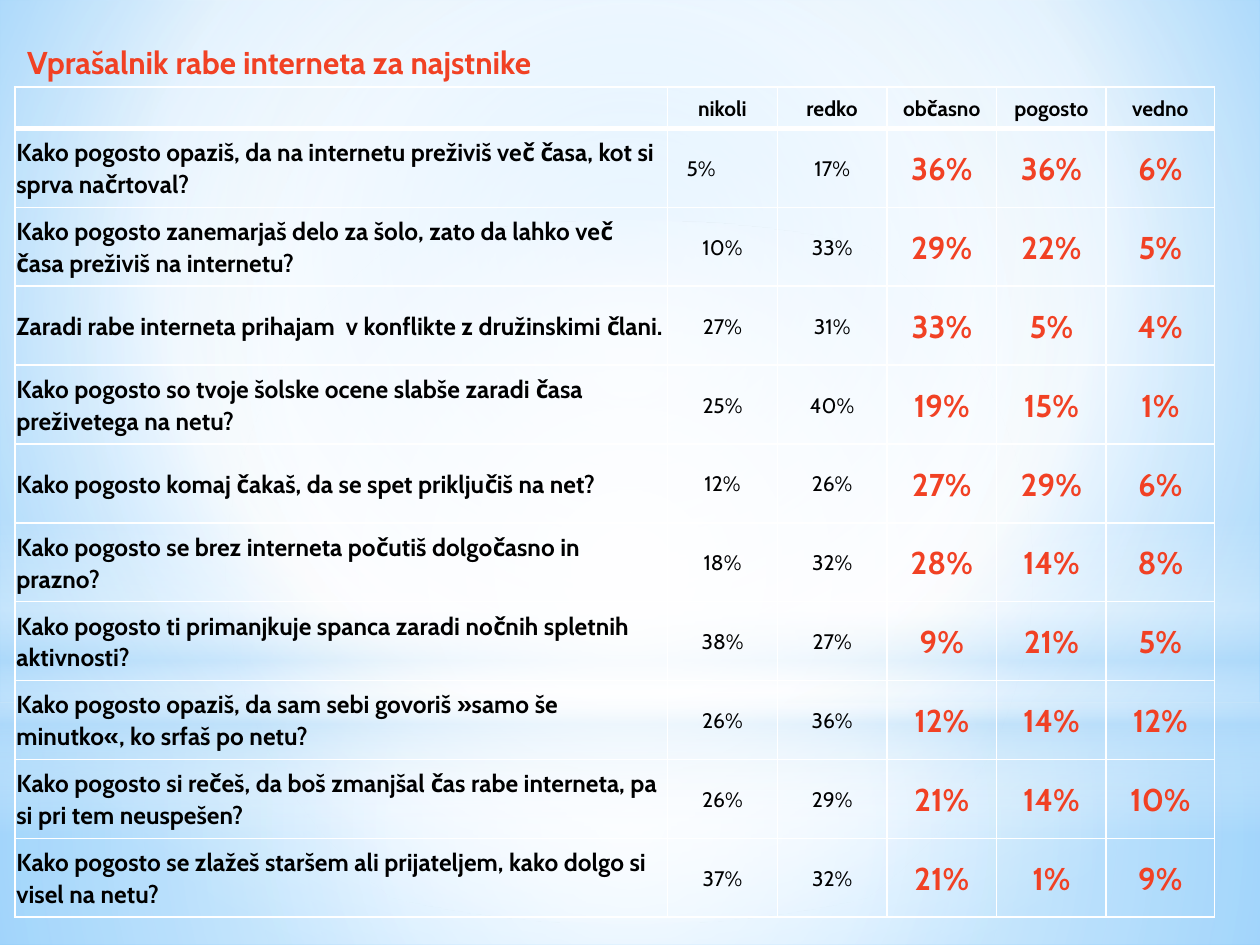
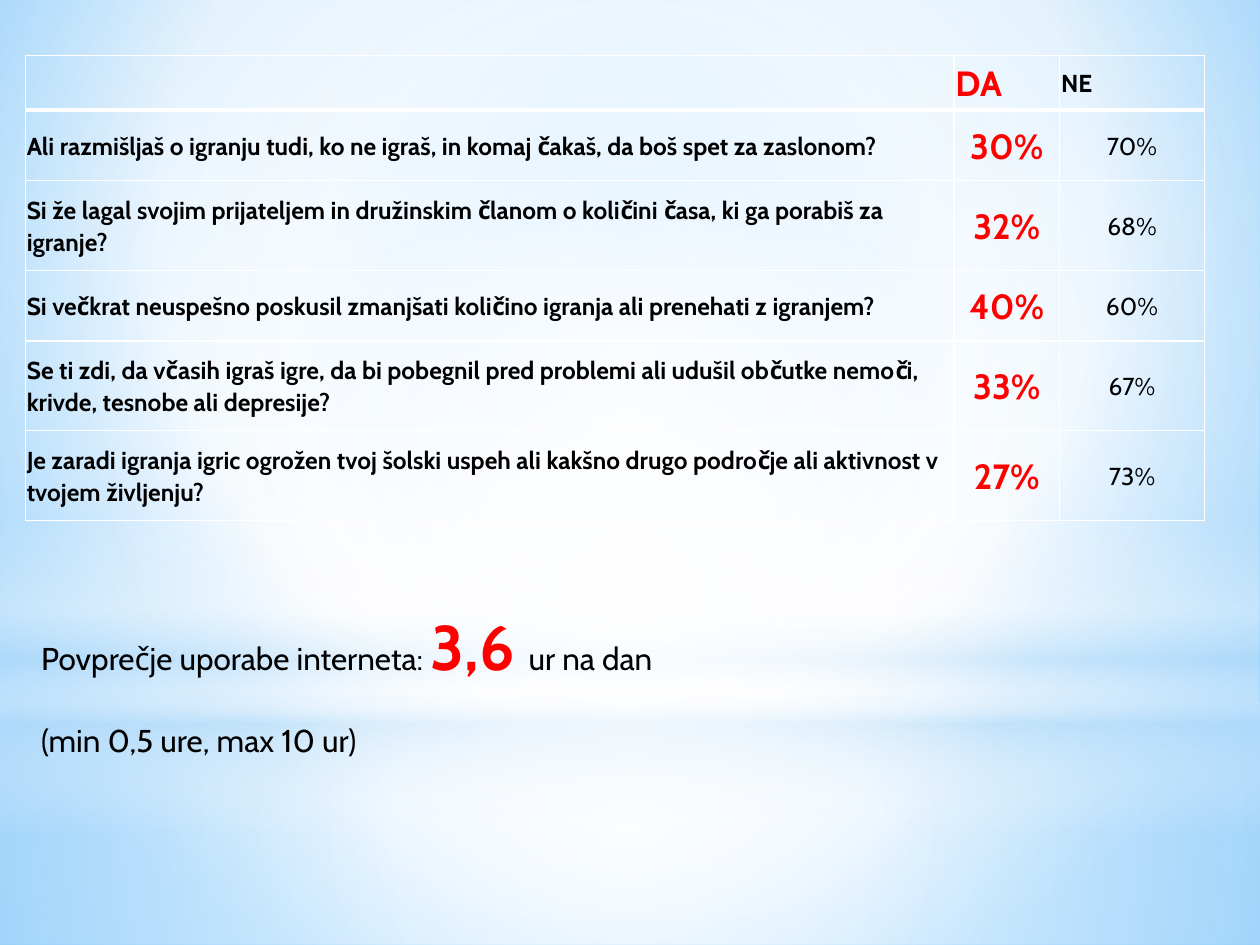
from dataclasses import dataclass

from lxml import etree
from pptx import Presentation
from pptx import util as u
from pptx.dml.color import RGBColor
from pptx.enum import shapes, text
from pptx.oxml.ns import nsdecls, qn
from pptx.util import Cm, Pt


# Theme: colours, type sizes and table measures
@dataclass(frozen=True)
class Theme:
    font: str = "Cabin"
    ink: str = "000000"
    white: str = "FFFFFF"
    orange: str = "F14124"
    red: str = "FF0000"
    sky: str = "9ED5FF"
    deep_sky: str = "5BB9FF"
    haze: str = "B4DCFA"
    small: int = 12
    question: int = 14
    body: int = 18
    answer: int = 20
    figure: int = 36
    spacing: float = 1.07
    inset: u.Length = Cm(0.03)
    rule: u.Length = Pt(1)
    header_rule: u.Length = Pt(3)


@dataclass(frozen=True)
class Style:
    size: int
    color: str = Theme.ink
    bold: bool = False
    align: text.PP_ALIGN = text.PP_ALIGN.CENTER


def gradient(stops, focus=None):
    """Gradient of (position, colour, opacity); circular if it has a focus."""
    gs = "".join(
        f'<a:gs pos="{pos * 1000}"><a:srgbClr val="{color}">'
        f'<a:alpha val="{opacity * 1000}"/></a:srgbClr></a:gs>'
        for pos, color, opacity in stops)
    if focus:
        sides = " ".join(f'{side}="{value * 1000}"' for side, value in zip("ltrb", focus))
        shade = f'<a:path path="circle"><a:fillToRect {sides}/></a:path>'
    else:
        shade = '<a:lin ang="5400000" scaled="0"/>'
    return etree.fromstring(
        f'<a:gradFill {nsdecls("a")} rotWithShape="1"><a:gsLst>{gs}</a:gsLst>{shade}</a:gradFill>')


def swap_fill(parent, grad):
    parent.replace(parent.find(qn("a:solidFill")), grad)


class Deck:
    def __init__(self, theme):
        self.theme = theme
        self.prs = Presentation()
        self.prs.slide_width, self.prs.slide_height = Cm(25.4), Cm(19.05)
        self.s = None

    def new_slide(self):
        self.s = self.prs.slides.add_slide(self.prs.slide_layouts[6])

    def backdrop(self, stops, focus, glows):
        """Give the master its background and its layers of light."""
        master = self.prs.slide_master
        master.background.fill.solid()
        swap_fill(master.element.find(".//" + qn("p:bgPr")), gradient(stops, focus))
        for number, (kind, top, height, glow_stops, glow_focus) in enumerate(glows, 20):
            sp = self.s.shapes.add_shape(kind, 0, Cm(top), self.prs.slide_width, Cm(height))
            sp.shadow.inherit = False
            sp.line.fill.background()
            sp.fill.solid()
            swap_fill(sp.element.spPr, gradient(glow_stops, glow_focus))
            sp.element.nvSpPr.cNvPr.id = number
            master.shapes.element.append(sp.element)

    def style_font(self, font, style):
        font.name, font.size, font.bold = self.theme.font, Pt(style.size), style.bold
        font.color.rgb = RGBColor.from_string(style.color)

    def text_box(self, left, top, width, height, paragraphs, wrap=True, gap=0):
        """Each paragraph is a list of (text, style) runs."""
        box = self.s.shapes.add_textbox(Cm(left), Cm(top), Cm(width), Cm(height))
        tf = box.text_frame
        tf.word_wrap = wrap
        tf.auto_size = text.MSO_AUTO_SIZE.SHAPE_TO_FIT_TEXT
        for i, runs in enumerate(paragraphs):
            p = tf.add_paragraph() if i else tf.paragraphs[0]
            if i:
                p.space_before = Pt(gap)
            for words, style in runs:
                r = p.add_run()
                r.text = words
                self.style_font(r.font if len(runs) > 1 else p.font, style)

    def borders(self, cell, **widths):
        tc_pr = cell._tc.get_or_add_tcPr()
        for i, side in enumerate("LRTB"):
            tc_pr.insert(i, etree.fromstring(
                f'<a:ln{side} {nsdecls("a")} w="{widths.get(side, self.theme.rule)}">'
                f'<a:solidFill><a:srgbClr val="{self.theme.white}"/></a:solidFill></a:ln{side}>'))

    def table(self, left, top, cols, heights, rows, header, columns):
        """header and columns hold one style per column."""
        th = self.theme
        frame = self.s.shapes.add_table(len(rows), len(cols), Cm(left), Cm(top),
                                        Cm(sum(cols)), Cm(sum(heights)))
        t = frame.table
        t.horz_banding = False
        for col, width in zip(t.columns, cols):
            col.width = Cm(width)
        for i, (row, height) in enumerate(zip(t.rows, heights)):
            row.height = Cm(height)
            styles = columns if i else header
            for cell, words, style in zip(row.cells, rows[i], styles):
                cell.fill.background()
                cell.vertical_anchor = text.MSO_ANCHOR.MIDDLE
                cell.margin_left = cell.margin_right = th.inset
                cell.margin_top = cell.margin_bottom = th.inset
                p = cell.text_frame.paragraphs[0]
                p.text, p.alignment, p.line_spacing = words, style.align, th.spacing
                self.style_font(p.font, style)
                edge = {0: {"B": th.header_rule}, 1: {"T": th.header_rule}}.get(i, {})
                self.borders(cell, **edge)
        return t


def main():
    th = Theme()
    deck = Deck(th)
    left = text.PP_ALIGN.LEFT
    rect, oval = shapes.MSO_SHAPE.RECTANGLE, shapes.MSO_SHAPE.OVAL
    centre = (50, 50, 50, 50)
    question = Style(th.question, bold=True, align=left)

    # Slide 1: internet use, with the backdrop that both slides share
    deck.new_slide()
    deck.backdrop(
        [(0, th.sky, 100), (60, th.white, 100), (100, th.deep_sky, 100)], (20, 10, 20, 60),
        [(rect, 14.17, 4.88,
          [(0, th.white, 91), (37, th.white, 76), (100, th.haze, 79)], centre),
         (rect, 0, 14.17,
          [(0, th.white, 89), (48, th.white, 62), (100, th.haze, 79)], centre),
         (rect, 10.46, 6.35,
          [(0, th.white, 0), (29, th.white, 30), (45, th.haze, 40),
           (55, th.white, 26), (65, th.haze, 60), (100, th.white, 0)], None),
         (oval, 4.44, 14.17, [(0, th.white, 100), (56, th.white, 0)], centre)])
    deck.text_box(0.3, 0.74, 12.78, 1.02,
                  [[("Vprašalnik rabe interneta za najstnike",
                     Style(th.body, th.orange, True))]], wrap=False)
    habits = [
        ("", "nikoli", "redko", "občasno", "pogosto", "vedno"),
        ("Kako pogosto opaziš, da na internetu preživiš več časa, kot si sprva načrtoval?",
         "5%", "17%", "36%", "36%", "6%"),
        ("Kako pogosto zanemarjaš delo za šolo, zato da lahko več časa preživiš na internetu?",
         "10%", "33%", "29%", "22%", "5%"),
        ("Zaradi rabe interneta prihajam  v konflikte z družinskimi člani.",
         "27%", "31%", "33%", "5%", "4%"),
        ("Kako pogosto so tvoje šolske ocene slabše zaradi časa preživetega na netu?",
         "25%", "40%", "19%", "15%", "1%"),
        ("Kako pogosto komaj čakaš, da se spet priključiš na net?",
         "12%", "26%", "27%", "29%", "6%"),
        ("Kako pogosto se brez interneta počutiš dolgočasno in prazno?",
         "18%", "32%", "28%", "14%", "8%"),
        ("Kako pogosto ti primanjkuje spanca zaradi nočnih spletnih aktivnosti?",
         "38%", "27%", "9%", "21%", "5%"),
        ("Kako pogosto opaziš, da sam sebi govoriš »samo še minutko«, ko srfaš po netu?",
         "26%", "36%", "12%", "14%", "12%"),
        ("Kako pogosto si rečeš, da boš zmanjšal čas rabe interneta, pa si pri tem neuspešen?",
         "26%", "29%", "21%", "14%", "10%"),
        ("Kako pogosto se zlažeš staršem ali prijateljem, kako dolgo si visel na netu?",
         "37%", "32%", "21%", "1%", "9%"),
    ]
    often = Style(th.body, th.orange, True)
    t = deck.table(0.3, 1.75, [13.16] + [2.21] * 4 + [2.18], [0.84] + [1.59] * 10, habits,
                   header=[Style(th.small, bold=True)] * 6,
                   columns=[question] + [Style(th.small)] * 2 + [often] * 3)
    first_never = t.cell(1, 1)
    first_never.margin_left = Cm(0.38)
    first_never.text_frame.paragraphs[0].alignment = left

    # Slide 2: gaming and average use
    deck.new_slide()
    gaming = [
        ("", "DA", "NE"),
        ("Ali razmišljaš o igranju tudi, ko ne igraš, in komaj čakaš, da boš spet za zaslonom?",
         "30%", "70%"),
        ("Si že lagal svojim prijateljem in družinskim članom o količini časa, "
         "ki ga porabiš za igranje?", "32%", "68%"),
        ("Si večkrat neuspešno poskusil zmanjšati količino igranja ali prenehati z igranjem?",
         "40%", "60%"),
        ("Se ti zdi, da včasih igraš igre, da bi pobegnil pred problemi ali udušil "
         "občutke nemoči, krivde, tesnobe ali depresije?", "33%", "67%"),
        ("Je zaradi igranja igric ogrožen tvoj šolski uspeh ali kakšno drugo področje "
         "ali aktivnost v tvojem življenju?", "27%", "73%"),
    ]
    one_line, two_lines = 1.42, 1.81
    deck.table(0.51, 1.12, [18.72, 2.13, 2.92],
               [1.1, one_line, two_lines, one_line, two_lines, two_lines], gaming,
               header=[question, Style(th.answer, th.red, True, left), question],
               columns=[question, Style(th.answer, th.red, True), Style(th.question)])
    plain = Style(th.body)
    deck.text_box(0.58, 12.12, 19.51, 3.33,
                  [[("Povprečje uporabe interneta: ", plain),
                    ("3,6 ", Style(th.figure, th.red, True)),
                    ("ur na dan", plain)],
                   [("(min 0,5 ure, max 10 ur)", plain)]], gap=22)

    deck.prs.save("out.pptx")


if __name__ == "__main__":
    main()
